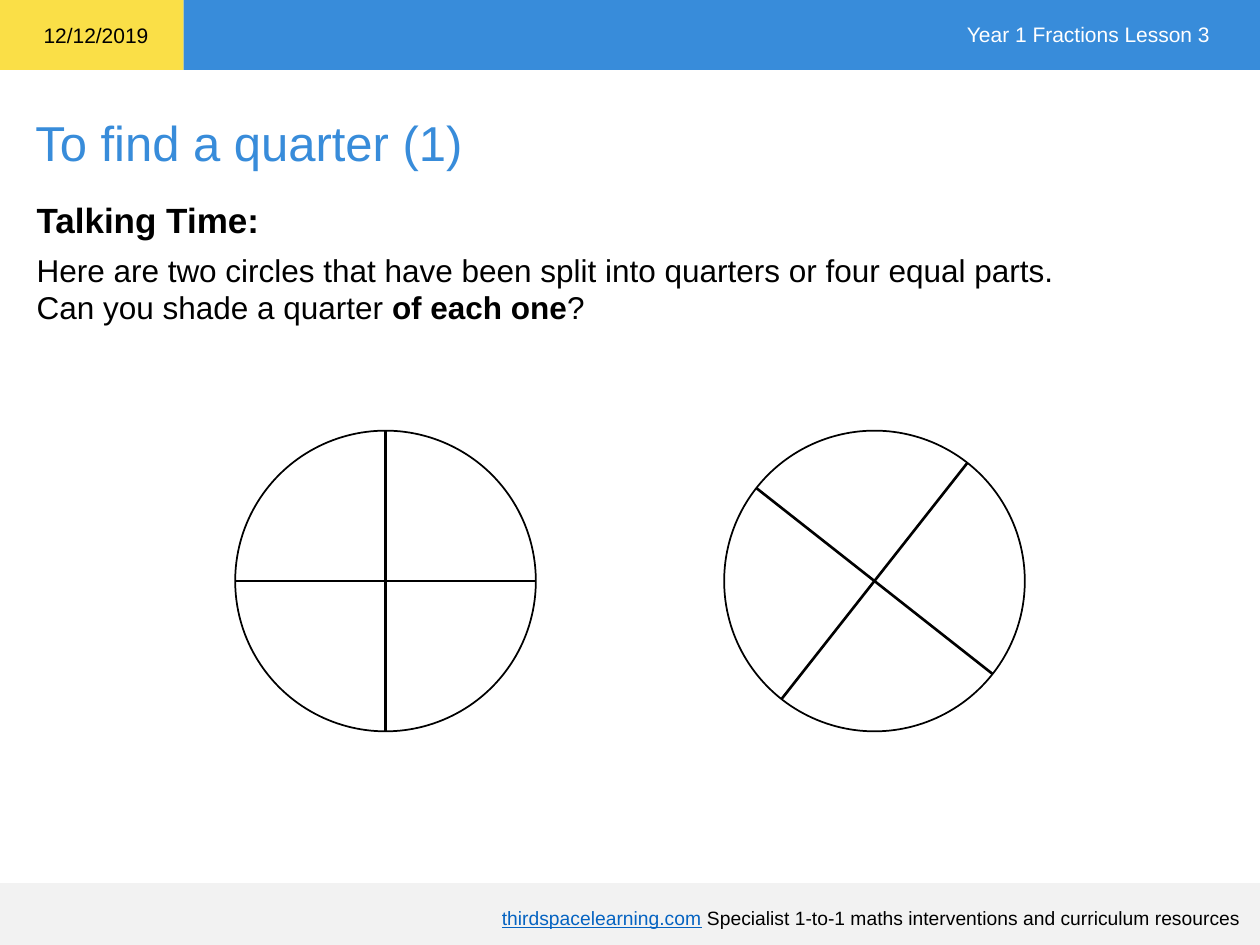
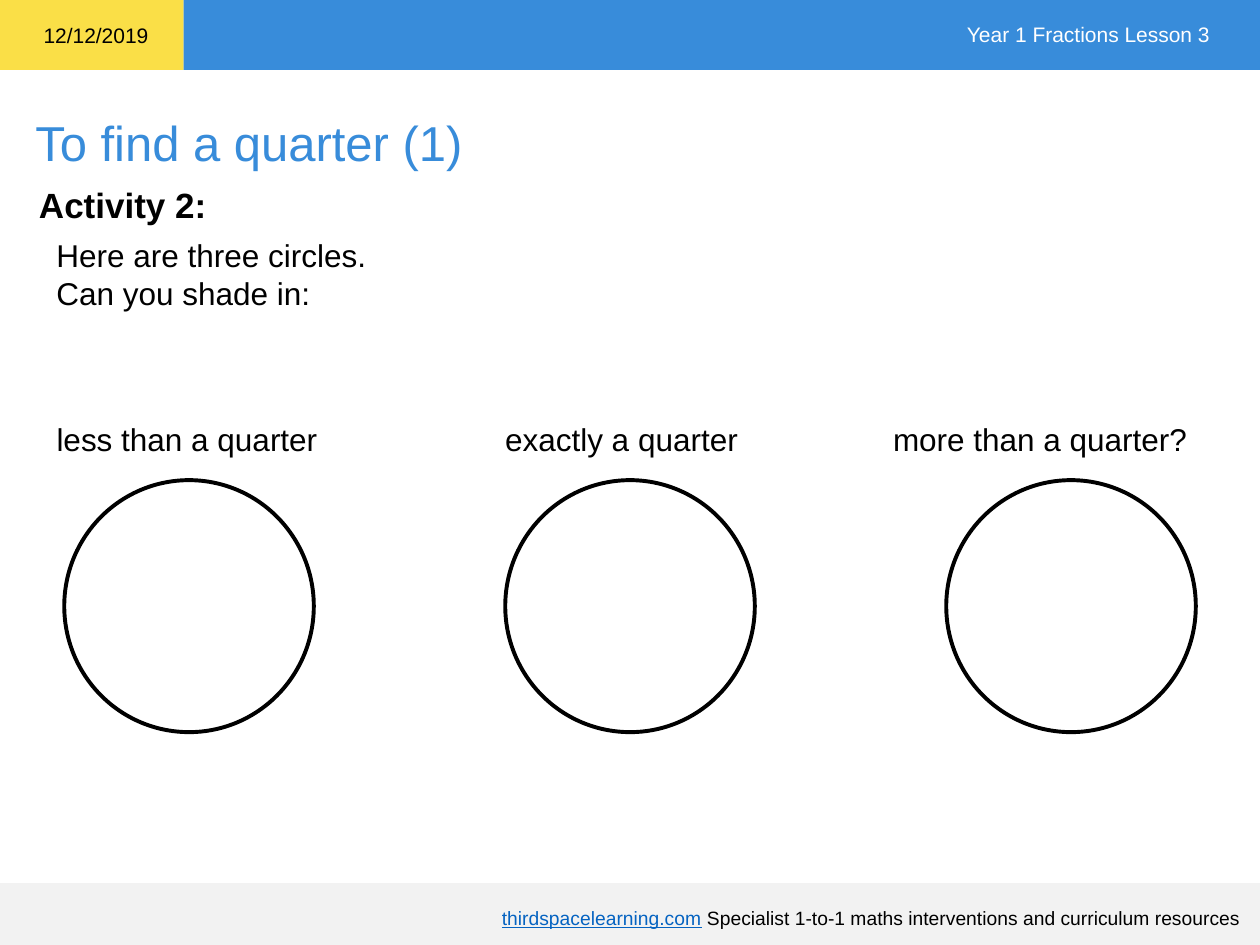
from dataclasses import dataclass
from math import cos, radians, sin

from lxml import etree
from pptx import Presentation
from pptx.dml.color import RGBColor
from pptx.enum.shapes import MSO_CONNECTOR, MSO_SHAPE
from pptx.enum.text import MSO_ANCHOR, PP_ALIGN
from pptx.oxml.ns import qn
from pptx.util import Pt

RECTANGLE, OVAL = MSO_SHAPE.RECTANGLE, MSO_SHAPE.OVAL
STRAIGHT = MSO_CONNECTOR.STRAIGHT
LEFT, RIGHT = PP_ALIGN.LEFT, PP_ALIGN.RIGHT
TOP, MIDDLE = MSO_ANCHOR.TOP, MSO_ANCHOR.MIDDLE

SLIDE_WIDTH, SLIDE_HEIGHT = 720, 540


@dataclass(frozen=True)
class Theme:
    font: str = "Arial"
    black: str = "000000"
    white: str = "FFFFFF"
    blue: str = "388CDA"
    yellow: str = "FADF47"
    grey: str = "F2F2F2"
    link: str = "0563C1"
    title_size: float = 28
    heading_size: float = 20
    body_size: float = 18
    header_size: float = 12
    footer_size: float = 11


class LessonDeck:
    """Holds the style and the slide being built."""

    def __init__(self, theme):
        self.theme = theme
        self.presentation = Presentation()
        self.presentation.slide_width = Pt(SLIDE_WIDTH)
        self.presentation.slide_height = Pt(SLIDE_HEIGHT)
        self.slide = None

    def new_slide(self, title):
        layout = self.presentation.slide_layouts.get_by_name("Title Only")
        self.slide = self.presentation.slides.add_slide(layout)
        self.title(title)
        self.header()
        self.footer()

    def fill_frame(self, frame, paragraphs, size, color=None, align=LEFT,
                   anchor=TOP, line_spacing=1.0, wrap=True):
        """Each paragraph is a list of (text, format values) runs."""
        frame.word_wrap = wrap
        frame.vertical_anchor = anchor
        for index, runs in enumerate(paragraphs):
            paragraph = frame.paragraphs[0] if index == 0 else frame.add_paragraph()
            layout = {"alignment": align, "line_spacing": line_spacing,
                      "space_before": Pt(0)}
            for name, value in layout.items():
                setattr(paragraph, name, value)
            for text, values in runs:
                run = paragraph.add_run()
                run.text = text
                values = {"name": self.theme.font, "size": Pt(size),
                          "color": color or self.theme.black, **values}
                run.font.color.rgb = RGBColor.from_string(values.pop("color"))
                for name, value in values.items():
                    setattr(run.font, name, value)

    def title(self, text):
        title = self.slide.shapes.title
        place = {"left": 13, "top": 60.5, "width": 703.4, "height": 41}
        for name, value in place.items():
            setattr(title, name, Pt(value))
        self.fill_frame(title.text_frame, [[(text, {})]], self.theme.title_size,
                        self.theme.blue)

    def text(self, left, top, width, height, paragraphs, size, **layout):
        box = self.slide.shapes.add_textbox(Pt(left), Pt(top), Pt(width), Pt(height))
        self.fill_frame(box.text_frame, paragraphs, size, **layout)

    def heading(self, left, top, text):
        self.text(left, top, 143, 32, [[(text, {"bold": True})]],
                  self.theme.heading_size, line_spacing=1.07, wrap=False)

    def body(self, left, top, width, paragraphs):
        self.text(left, top, width, 7.5 + 21.6 * len(paragraphs), paragraphs,
                  self.theme.body_size)

    def shape(self, kind, left, top, width, height, fill, line_width=0):
        shape = self.slide.shapes.add_shape(kind, Pt(left), Pt(top), Pt(width), Pt(height))
        shape.shadow.inherit = False
        shape.fill.solid()
        shape.fill.fore_color.rgb = RGBColor.from_string(fill)
        if line_width:
            shape.line.color.rgb = RGBColor.from_string(self.theme.black)
            shape.line.width = Pt(line_width)
        else:
            shape.line.fill.background()

    def circle(self, left, top, width, height, line_width):
        self.shape(OVAL, left, top, width, height, self.theme.white, line_width)

    def line(self, start_x, start_y, end_x, end_y, width):
        line = self.slide.shapes.add_connector(
            STRAIGHT, Pt(start_x), Pt(start_y), Pt(end_x), Pt(end_y))
        line.line.color.rgb = RGBColor.from_string(self.theme.black)
        line.line.width = Pt(width)
        etree.SubElement(line._element.spPr, qn("a:effectLst"))

    def quartered_circle(self, center_x, center_y, radius, rotation):
        self.circle(center_x - radius, center_y - radius, 2 * radius, 2 * radius, 1)
        for angle in (rotation, rotation + 90):
            reach_x = radius * cos(radians(angle))
            reach_y = radius * sin(radians(angle))
            self.line(center_x - reach_x, center_y - reach_y,
                      center_x + reach_x, center_y + reach_y, 1.5)

    def header(self):
        theme = self.theme
        date_width, height = 105, 40
        self.shape(RECTANGLE, 0, 0, date_width, height, theme.yellow)
        self.shape(RECTANGLE, date_width, 0, SLIDE_WIDTH - date_width, height, theme.blue)
        self.text(17.8, 9.4, 75, 22, [[("12/12/2019", {})]], theme.header_size,
                  wrap=False)
        self.text(518.6, 9, 180, 22, [[("Year 1 Fractions Lesson 3", {})]],
                  theme.header_size, color=theme.white, align=RIGHT)

    def footer(self):
        theme = self.theme
        top = 504.6
        self.shape(RECTANGLE, 0, top, SLIDE_WIDTH, SLIDE_HEIGHT - top, theme.grey)
        self.text(230, 513, 486, 23, [[
            ("thirdspacelearning.com", {"color": theme.link, "underline": True}),
            (" Specialist 1-to-1 maths interventions and curriculum resources", {}),
        ]], theme.footer_size, align=RIGHT, anchor=MIDDLE)


def build_talking_time(deck):
    deck.new_slide("To find a quarter (1)")
    deck.heading(13.8, 108, "Talking Time:")
    deck.body(13.8, 139.7, 696, [
        [("Here are two circles that have been split into quarters or four equal parts.", {})],
        [("Can you shade a quarter ", {}), ("of each one", {"bold": True}), ("?", {})],
    ])

    # Two circles in quarters, the second one turned
    for center_x, rotation in ((220.3, 0), (499.7, 38.2)):
        deck.quartered_circle(center_x, 332, 85.9, rotation)


def build_activity(deck):
    deck.new_slide("To find a quarter (1)")
    deck.heading(15.2, 99.6, "Activity 2:")
    deck.body(25.2, 131.2, 200, [
        [("Here are three circles.", {})],
        [("Can you shade in:", {})],
    ])

    # Three evenly spaced circles, each with its label
    labels = ((25.2, "less than a quarter"),
              (281.5, "exactly a quarter"),
              (503.2, "more than a quarter?"))
    for index, (label_left, label) in enumerate(labels):
        deck.circle(36.7 + 252 * index, 274.4, 142.6, 144, 2.25)
        deck.body(label_left, 236.2, 187, [[(label, {})]])


def main():
    deck = LessonDeck(Theme())
    build_talking_time(deck)
    build_activity(deck)
    deck.presentation.save("out.pptx")


if __name__ == "__main__":
    main()
